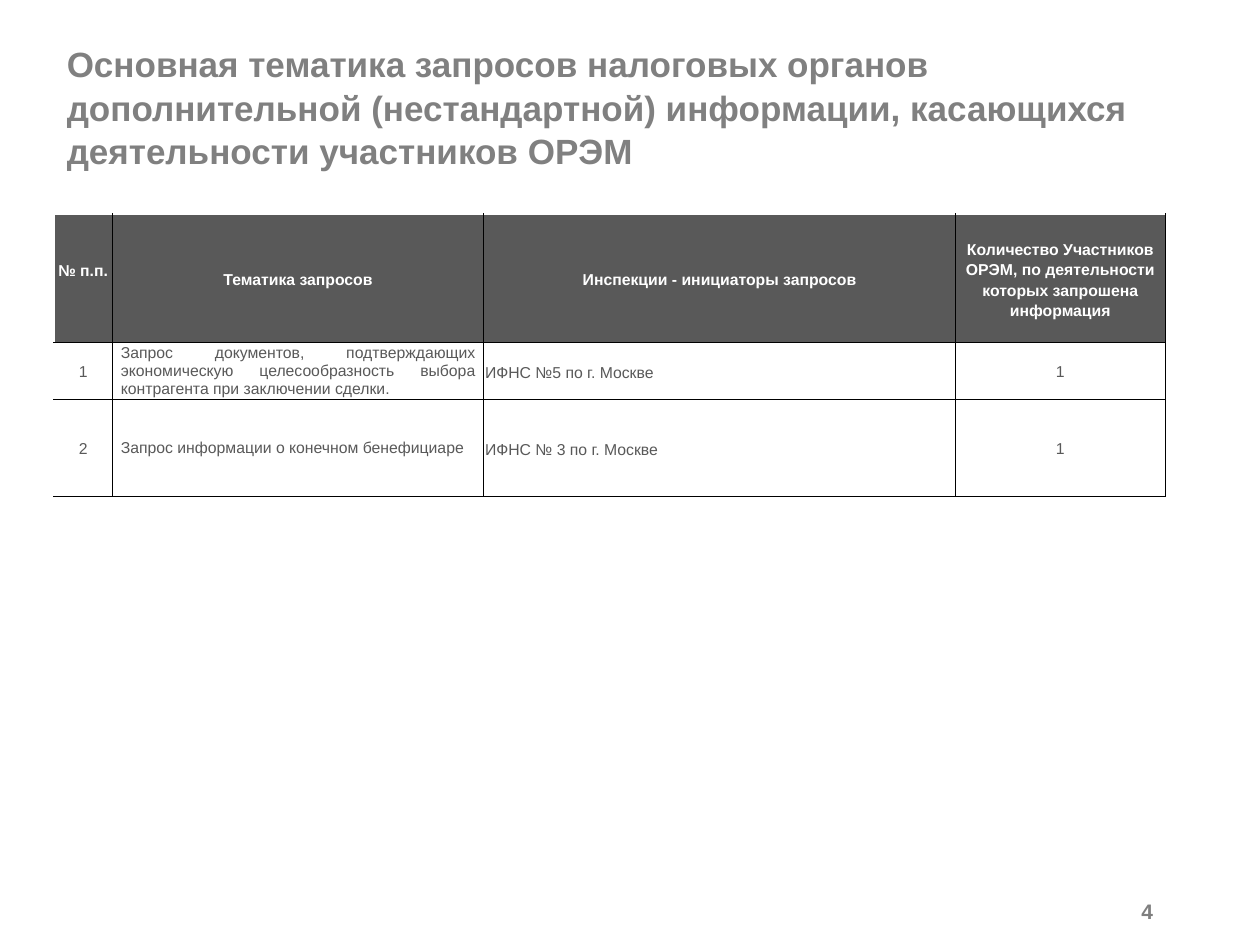
"""Build the slide on the main topics of tax authority requests."""
from lxml.etree import SubElement
from pptx import Presentation
from pptx.dml.color import RGBColor
from pptx.enum.text import MSO_ANCHOR, MSO_AUTO_SIZE, PP_ALIGN
from pptx.oxml.ns import qn
from pptx.util import Inches, Pt

THEME = dict(font="Arial", title="808080", number="7F7F7F", dark="595959",
             white="FFFFFF", line="000000", title_size=20, number_size=12, cell_size=9)
LEFT, WIDTH = 0.43, 8.82
COLS = [0.46, 2.95, 3.74, 1.67]
ROWS = [1.02, 0.42, 0.77]
HEADERS = ["№ п.п.", "Тематика запросов", "Инспекции - инициаторы запросов",
           "Количество Участников ОРЭМ, по деятельности которых запрошена информация"]
REQUESTS = [
    ["1", "Запрос документов, подтверждающих экономическую целесообразность выбора "
          "контрагента при заключении сделки.", "ИФНС №5 по г. Москве", "1"],
    ["2", "Запрос информации о конечном бенефициаре", "ИФНС № 3 по г. Москве", "1"],
]
ALIGNS = [PP_ALIGN.CENTER, PP_ALIGN.JUSTIFY, PP_ALIGN.JUSTIFY, PP_ALIGN.CENTER]


def write(tf, text, size, color, bold, align, spacing=1.0):
    tf.text = text
    tf.word_wrap = True
    p = tf.paragraphs[0]
    p.alignment, p.line_spacing = align, spacing
    font = p.runs[0].font
    font.name, font.size, font.bold = THEME["font"], Pt(THEME[size]), bold
    font.color.rgb = RGBColor.from_string(THEME[color])


def add_border(cell, side):
    ln = SubElement(cell._tc.get_or_add_tcPr(), qn(f"a:{side}"), w=str(Pt(0.5)))
    SubElement(SubElement(ln, qn("a:solidFill")), qn("a:srgbClr"), val=THEME["line"])


prs = Presentation()
prs.slide_width, prs.slide_height = Inches(10), Inches(7.5)
s = prs.slides.add_slide(prs.slide_layouts[5])

title = s.shapes.title
title.left, title.top, title.width, title.height = map(Inches, (LEFT, 0.3, WIDTH, 1.09))
write(title.text_frame, "Основная тематика запросов налоговых органов дополнительной "
      "(нестандартной) информации, касающихся деятельности участников ОРЭМ",
      "title_size", "title", True, PP_ALIGN.LEFT, 1.04)
title.text_frame.auto_size = MSO_AUTO_SIZE.NONE
title.text_frame.vertical_anchor = MSO_ANCHOR.MIDDLE

number = s.shapes.add_textbox(*map(Inches, (LEFT + WIDTH - 1.1, 7.06, 1.1, 0.34)))
write(number.text_frame, "4", "number_size", "number", True, PP_ALIGN.RIGHT)
number.text_frame.vertical_anchor = MSO_ANCHOR.MIDDLE

table = s.shapes.add_table(len(ROWS), len(COLS),
                           *map(Inches, (LEFT, 1.7, WIDTH, sum(ROWS)))).table
table.first_row = table.horz_banding = False
for col, width in zip(table.columns, COLS):
    col.width = Inches(width)
for row, height in zip(table.rows, ROWS):
    row.height = Inches(height)

for i, texts in enumerate([HEADERS] + REQUESTS):
    head = i == 0
    for j, text in enumerate(texts):
        cell = table.cell(i, j)
        tight = head or j == 2
        single = (head and j == 0) or (not head and j == 1)
        cell.margin_left = cell.margin_right = Inches(0.01 if tight else 0.07)
        cell.margin_top = Inches(0.01 if tight else 0)
        cell.margin_bottom = Inches(0.13 if head and j == 0 else 0)
        cell.vertical_anchor = MSO_ANCHOR.MIDDLE
        write(cell.text_frame, text, "cell_size", "white" if head else "dark", head,
              PP_ALIGN.CENTER if head else ALIGNS[j], 1.0 if single else 1.15)
        for side, shown in (("lnL", j > 0), ("lnR", True), ("lnT", i > 0), ("lnB", True)):
            if shown:
                add_border(cell, side)
        cell.fill.solid()
        cell.fill.fore_color.rgb = RGBColor.from_string(THEME["dark" if head else "white"])

prs.save("out.pptx")
